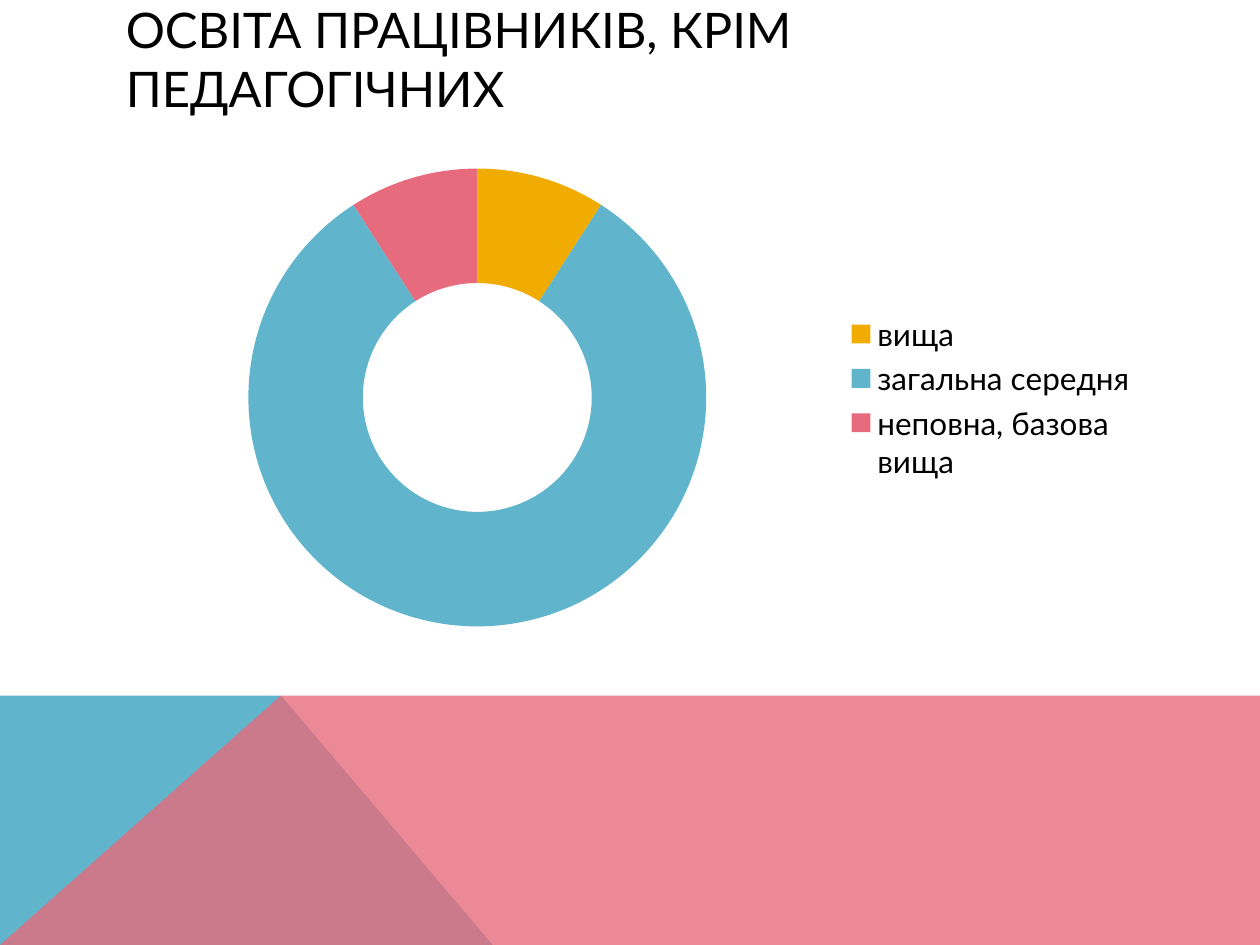
from pptx import Presentation
from pptx.chart.data import CategoryChartData
from pptx.dml.color import RGBColor
from pptx.enum.chart import XL_CHART_TYPE, XL_LEGEND_POSITION
from pptx.enum.text import MSO_ANCHOR, PP_ALIGN
from pptx.oxml.ns import qn
from pptx.util import Inches, Pt
from lxml import etree

DOUGHNUT = XL_CHART_TYPE.DOUGHNUT
LEGEND_RIGHT = XL_LEGEND_POSITION.RIGHT
MIDDLE = MSO_ANCHOR.MIDDLE
LEFT = PP_ALIGN.LEFT

FONT = "Lato"
BLACK, GOLD, BLUE, PINK = "000000", "F0AD00", "60B5CC", "E66C7D"
EDUCATION = [
    ("вища", 9, GOLD),
    ("загальна середня", 81, BLUE),
    ("неповна, базова вища", 9, PINK),
]


def color(value):
    return RGBColor.from_string(value)


def style_font(font, size):
    font.name = FONT
    font.size = Pt(size)
    font.color.rgb = color(BLACK)


def add_polygon(slide, points, fill, opacity=100):
    """Draw a closed outline through points given in inches."""
    corners = [(Inches(x), Inches(y)) for x, y in points]
    builder = slide.shapes.build_freeform(*corners[0])
    builder.add_line_segments(corners[1:], close=True)
    shape = builder.convert_to_shape()
    shape.shadow.inherit = False
    shape.fill.solid()
    shape.fill.fore_color.rgb = color(fill)
    shape.line.fill.background()
    if opacity < 100:
        fill_color = shape.fill._xPr.find(qn("a:solidFill"))[0]
        etree.SubElement(fill_color, qn("a:alpha"), val=str(opacity * 1000))


def add_footer_band(slide, left, top, width, height):
    bottom = top + height
    peak = (left + 2.23, top)
    # Blue wedge behind the translucent pink band
    add_polygon(slide, [(left, bottom), (left, top), peak,
                        (left + 3.91, bottom)], BLUE)
    add_polygon(slide, [(left, bottom), peak, (left + width, top),
                        (left + width, bottom)], PINK, opacity=80)


def add_title(slide, left, top, width, height):
    box = slide.shapes.add_textbox(Inches(left), Inches(top),
                                   Inches(width), Inches(height))
    text_frame = box.text_frame
    text_frame.word_wrap = True
    text_frame.vertical_anchor = MIDDLE
    # The closing line break lifts the two title lines
    text_frame.text = "ОСВІТА ПРАЦІВНИКІВ, КРІМ ПЕДАГОГІЧНИХ\v"
    paragraph = text_frame.paragraphs[0]
    paragraph.alignment = LEFT
    style_font(paragraph.font, 28)
    for run in paragraph.runs:
        style_font(run.font, 28)


def add_education_chart(slide, left, top, width, height):
    data = CategoryChartData()
    data.categories = [name for name, _, _ in EDUCATION]
    data.add_series("Series 1", [value for _, value, _ in EDUCATION])
    chart = slide.shapes.add_chart(DOUGHNUT, Inches(left), Inches(top),
                                   Inches(width), Inches(height), data).chart
    style_font(chart.font, 18)
    chart.has_title = False
    chart.has_legend = True
    chart.legend.position = LEGEND_RIGHT
    chart.legend.include_in_layout = False

    # One colour per education level
    plot = chart.plots[0]
    plot.vary_by_categories = True
    plot._element.find(qn("c:holeSize")).set("val", "50")
    for index, (_, _, fill) in enumerate(EDUCATION):
        point_format = plot.series[0].points[index].format
        point_format.fill.solid()
        point_format.fill.fore_color.rgb = color(fill)
        point_format.line.fill.background()


def main():
    presentation = Presentation()
    presentation.slide_width = Inches(10)
    presentation.slide_height = Inches(7.5)
    slide = presentation.slides.add_slide(presentation.slide_layouts[6])
    add_footer_band(slide, 0, 5.52, 10, 1.98)
    add_title(slide, 0.9, 0.4, 8.22, 0.6)
    add_education_chart(slide, 0.9, 1.2, 8.23, 3.91)
    presentation.save("out.pptx")


if __name__ == "__main__":
    main()
